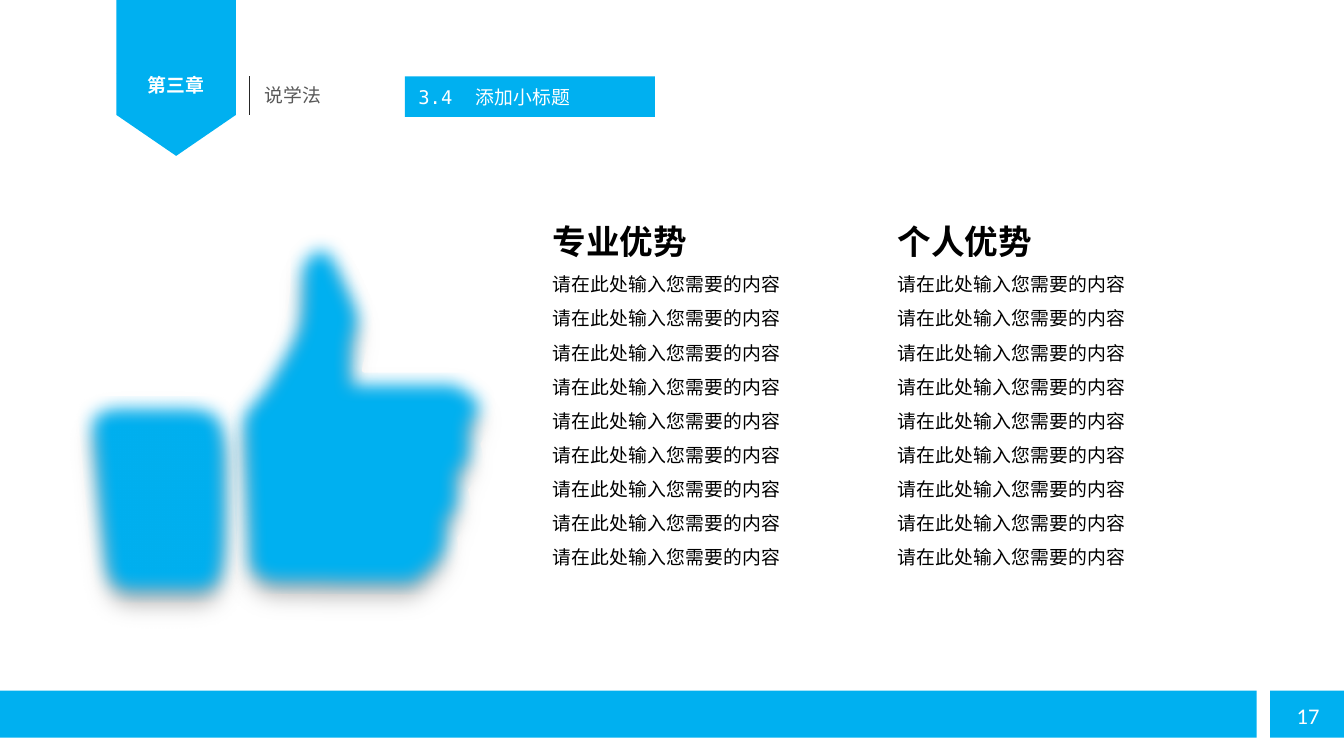
from pptx import Presentation
from pptx.dml.color import RGBColor
from pptx.enum.shapes import MSO_CONNECTOR, MSO_SHAPE as SHAPE
from pptx.enum.text import MSO_ANCHOR as ANCHOR, MSO_AUTO_SIZE as AUTO_SIZE, PP_ALIGN as ALIGN
from pptx.oxml import parse_xml
from pptx.oxml.ns import nsdecls, qn
from pptx.oxml.xmlchemy import OxmlElement
from pptx.util import Pt

BLUE = RGBColor(0x00, 0xB0, 0xF0)
WHITE = RGBColor(0xFF, 0xFF, 0xFF)
BLACK = RGBColor(0x00, 0x00, 0x00)
GRAY = RGBColor(0x59, 0x59, 0x59)
DARK = RGBColor(0x26, 0x26, 0x26)
PALE = RGBColor(0xF2, 0xF2, 0xF2)

CJK_FONT = "Noto Sans CJK SC"
LATIN_FONT = "Calibri"
MONO_FONT = "DejaVu Sans Mono"
SMALL_SIZE = 10.13

ITEM = "请在此处输入您需要的内容"
ITEM_COUNT = 9

THUMB_BOX = (81.7, 3.8, 145.4, 196.6)
THUMB_OUTLINE = [
    [(86, 192.5)],
    [(89.6, 196.1), (90.3, 198.2), (97.5, 199)],
    [(189.7, 199.7)],
    [(199.8, 191), (208.4, 188.2), (206.2, 168)],
    [(213.4, 159.4), (215.6, 155), (212, 142.1)],
    [(221.4, 134.2), (221.4, 128.4), (218.5, 117.6)],
    [(235.8, 93.1), (224.2, 84.5), (212.7, 78)],
    [(155.1, 78)],
    [(157.3, 67.2), (161.6, 57.1), (160.2, 45.6)],
    [(158.7, 34.1), (152.2, 24), (147.9, 13.2)],
    [(142.9, -1.2), (118.4, 1.7), (114.1, 13.9)],
    [(113.4, 24), (114.8, 31.9), (112.6, 44.2)],
    [(109, 57.1), (101.1, 67.2), (95.4, 78)],
    [(81.7, 94.6)],
    [(86, 192.5)],
]
CUFF_BOX = (-0.4, 91, 88.6, 113)
CUFF_OUTLINE = [
    [(0.3, 106.8)],
    [(-0.4, 95.3), (1.8, 93.1), (11.1, 91)],
    [(70.9, 91)],
    [(85.3, 92.4), (86.7, 93.1), (88.2, 114.7)],
    [(88.2, 130.6), (88.2, 168), (87.4, 185.3)],
    [(85.3, 201.8), (85.3, 204), (68.7, 204)],
    [(21.9, 204)],
    [(11.8, 203.3), (11.1, 201.1), (9, 193.9)],
    [(5.4, 165.1), (3.2, 135.6), (0.3, 106.8)],
]


def style_run(run, size, color, font=CJK_FONT, bold=False):
    """Format a run, naming the Chinese font for East Asian text where it is used."""
    run.font.name, run.font.size, run.font.bold = font, Pt(size), bold
    run.font.color.rgb = color
    if font == CJK_FONT:
        east_asian = OxmlElement("a:ea")
        east_asian.set("typeface", font)
        run.font._element.find(qn("a:latin")).addnext(east_asian)


def add_block(slide, kind, left, top, width, height):
    """Add a plain blue shape."""
    shape = slide.shapes.add_shape(kind, Pt(left), Pt(top), Pt(width), Pt(height))
    shape.shadow.inherit = False
    shape.fill.solid()
    shape.fill.fore_color.rgb = BLUE
    shape.line.fill.background()
    return shape


def add_label(slide, box, text, size, color, font=CJK_FONT, bold=False):
    """Add a one-line text box and return it."""
    label = slide.shapes.add_textbox(*map(Pt, box))
    label.text_frame.text = text
    label.text_frame.word_wrap = True
    style_run(label.text_frame.paragraphs[0].runs[0], size, color, font, bold)
    return label


def add_ribbon(slide, left, top, width, height):
    """Draw the chapter ribbon hanging from the top edge."""
    tip = 43.9
    point_top = height - tip
    add_block(slide, SHAPE.PENTAGON, left + (width - tip) / 2,
              top + point_top - (width - tip) / 2, tip, width).rotation = 90
    add_block(slide, SHAPE.RECTANGLE, left, top, width, point_top)
    label = add_label(slide, (left, top + 33.4, width, 18.7), "第三章",
                      SMALL_SIZE, WHITE, LATIN_FONT, True)
    frame = label.text_frame
    frame.margin_left = frame.margin_top = frame.margin_right = frame.margin_bottom = 0
    frame.paragraphs[0].alignment = ALIGN.CENTER
    frame.paragraphs[0].line_spacing = 1.5


def add_section(slide, left, top, width, height):
    """Place the section name with the rule at its left."""
    rule = slide.shapes.add_connector(MSO_CONNECTOR.STRAIGHT, Pt(left), Pt(top),
                                      Pt(left), Pt(top + height))
    rule.line.color.rgb = DARK
    rule.line.width = Pt(0.75)
    rule._element.spPr.append(OxmlElement("a:effectLst"))
    add_label(slide, (left + 0.9, top + 0.2, width, 19.4), "说学法", SMALL_SIZE, GRAY)


def place_title(title, left, top, width, height):
    """Turn the title placeholder into the blue heading bar."""
    title.left, title.top, title.width, title.height = map(Pt, (left, top, width, height))
    title.fill.solid()
    title.fill.fore_color.rgb = BLUE
    frame = title.text_frame
    frame.auto_size = AUTO_SIZE.NONE
    frame.vertical_anchor = ANCHOR.MIDDLE
    paragraph = frame.paragraphs[0]
    paragraph.alignment = ALIGN.LEFT
    for text, font in (("3.4  ", MONO_FONT), ("添加小标题", LATIN_FONT)):
        run = paragraph.add_run()
        run.text = text
        style_run(run, SMALL_SIZE, WHITE, font)


def place_column(body, heading, left, top, width, height):
    """Fill a body placeholder with a heading and its items."""
    body.left, body.top, body.width, body.height = map(Pt, (left, top, width, height))
    frame = body.text_frame
    frame.auto_size = AUTO_SIZE.NONE
    frame.text = "\n".join([heading] + [ITEM] * ITEM_COUNT)
    for index, paragraph in enumerate(frame.paragraphs):
        paragraph.line_spacing = 1.5
        paragraph.space_before = Pt(0)
        properties = paragraph._p.get_or_add_pPr()
        properties.set("marL", "0")
        properties.set("indent", "0")
        properties.append(OxmlElement("a:buNone"))
        is_heading = index == 0
        style_run(paragraph.runs[0], 18 if is_heading else SMALL_SIZE, BLACK, bold=is_heading)


def add_curved_outline(shapes, left, top, box, outline):
    """Add a freeform of the given box whose path holds lines and cubic curves."""
    box_left, box_top, width, height = box
    builder = shapes.build_freeform(0, 0, scale=Pt(1) / 100)
    builder.add_line_segments([(width * 100, height * 100)], close=True)
    shape = builder.convert_to_shape(Pt(left + box_left), Pt(top + box_top))
    outline_path = next(shape._element.iter(qn("a:path")))
    for command in list(outline_path):
        outline_path.remove(command)
    for index, segment in enumerate(outline):
        tag = "a:moveTo" if index == 0 else "a:lnTo" if len(segment) == 1 else "a:cubicBezTo"
        command = OxmlElement(tag)
        for x, y in segment:
            point = OxmlElement("a:pt")
            point.set("x", str(round((x - box_left) * 100)))
            point.set("y", str(round((y - box_top) * 100)))
            command.append(point)
        outline_path.append(command)
    outline_path.append(OxmlElement("a:close"))
    return shape


def add_hand(slide, left, top):
    """Draw the soft-edged thumb and cuff as a group from the given corner."""
    group = slide.shapes.add_group_shape()
    for box, outline in ((THUMB_BOX, THUMB_OUTLINE), (CUFF_BOX, CUFF_OUTLINE)):
        shape = add_curved_outline(group.shapes, left, top, box, outline)
        shape.fill.solid()
        shape.fill.fore_color.rgb = BLUE
        shape.line.color.rgb = PALE
        shape.line.width = Pt(3)
        shape.shadow.inherit = False
        effects = shape._element.spPr.find(qn("a:effectLst"))
        effects.append(parse_xml(
            f'<a:outerShdw {nsdecls("a")} blurRad="{Pt(8)}" dist="{Pt(8)}" dir="5400000" '
            'algn="t" rotWithShape="0"><a:srgbClr val="000000"><a:alpha val="30000"/>'
            '</a:srgbClr></a:outerShdw>'))
        effects.append(parse_xml(f'<a:softEdge {nsdecls("a")} rad="{Pt(10)}"/>'))


def add_footer(slide, left, top, width, height):
    """Draw the footer bar and the page number block."""
    number_width, gap = 39.6, 7.2
    number_left = left + width - number_width
    add_block(slide, SHAPE.RECTANGLE, left, top, width - number_width - gap, height)
    add_block(slide, SHAPE.RECTANGLE, number_left, top, number_width, height)
    label = add_label(slide, (number_left + 7.2, top + 2.7, 28.8, 21.6), "17",
                      12, WHITE, LATIN_FONT)
    label.text_frame.word_wrap = False


def main():
    """Build the slide and save it."""
    presentation = Presentation()
    presentation.slide_width, presentation.slide_height = Pt(720), Pt(405)
    slide = presentation.slides.add_slide(presentation.slide_layouts[3])
    title, *bodies = slide.placeholders
    add_ribbon(slide, 62.3, 0, 64.1, 83.5)
    add_section(slide, 133.7, 40.8, 144.7, 20.9)
    place_title(title, 216.9, 40.9, 134, 21.7)
    add_hand(slide, 40, 120)
    for body, heading, left in zip(bodies, ("专业优势", "个人优势"), (288.8, 473.6)):
        place_column(body, heading, left, 104.1, 246.2, 223.9)
    add_footer(slide, 0, 370, 720, 25.2)
    presentation.save("out.pptx")


if __name__ == "__main__":
    main()
